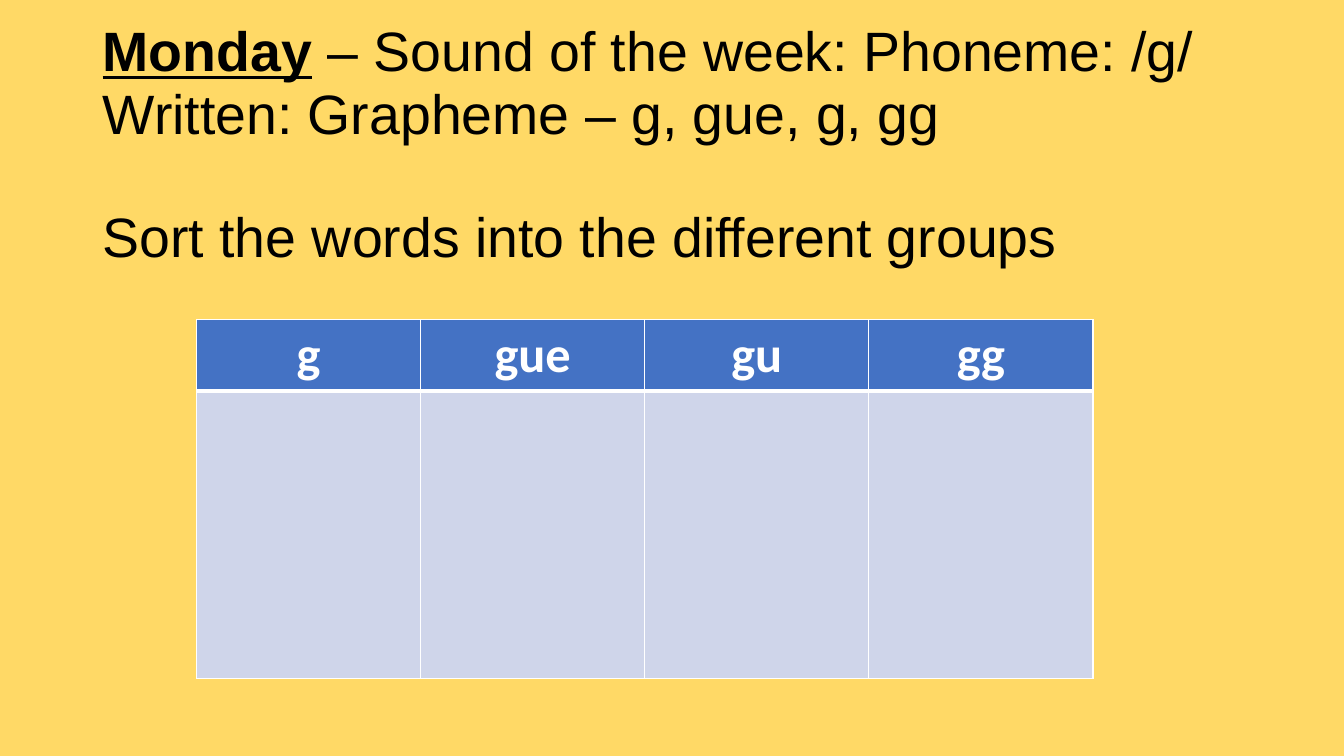
from dataclasses import dataclass

from lxml import etree
from pptx import Presentation, util as u
from pptx.dml.color import RGBColor
from pptx.enum import text
from pptx.oxml.ns import qn


@dataclass(frozen=True)
class Theme:
    background: str = "FFD966"
    ink: str = "000000"
    header: str = "4472C4"
    body: str = "CFD5EA"
    white: str = "FFFFFF"
    title_font: str = "Arial"
    table_font: str = "Calibri"
    title_size: float = 39.6
    table_size: int = 36
    thin: int = 1
    thick: int = 3


THEME = Theme()
WIDTH, HEIGHT = 13.33, 7.5
TITLE_BOX = (0.92, 0.72, 11.5, 1.45)
TABLE_BOX = (1.95, 3.17, 8.89, 3.56)
HEADER_SHARE = 0.2
GRAPHEMES = ["g", "gue", "gu", "gg"]
TITLE = [
    [("Monday", True), (" – Sound of the week: Phoneme: /g/ Written: Grapheme – g, gue, g, gg", False)],
    [("Sort the words into the different groups", False)],
]


def add_span(para, words, color, **formats):
    span = para.add_run()
    span.text = words
    span.font.color.rgb = RGBColor.from_string(color)
    for name, value in formats.items():
        setattr(span.font, name, value)


def add_title(page, box):
    frame = page.shapes.add_textbox(*map(u.Inches, box)).text_frame
    frame.word_wrap = True
    frame.vertical_anchor = text.MSO_ANCHOR.MIDDLE
    for index, spans in enumerate(TITLE):
        para = frame.add_paragraph() if index else frame.paragraphs[0]
        para.line_spacing = 0.94
        para.space_before = u.Pt(43 * index)
        for words, strong in spans:
            add_span(para, words, THEME.ink, name=THEME.title_font,
                     size=u.Pt(THEME.title_size), bold=strong, underline=strong)


def set_borders(cell, **widths):
    """Draw white cell edges; the fill must be set afterwards."""
    properties = cell._tc.get_or_add_tcPr()
    for side in ("L", "R", "T", "B"):
        width = widths.get(side, THEME.thin)
        line = etree.SubElement(properties, qn(f"a:ln{side}"), w=str(u.Pt(width)))
        fill = etree.SubElement(line, qn("a:solidFill"))
        etree.SubElement(fill, qn("a:srgbClr"), val=THEME.white)


def add_sorting_table(page, box):
    table = page.shapes.add_table(2, len(GRAPHEMES), *map(u.Inches, box)).table
    height = box[3]
    table.rows[0].height = u.Inches(height * HEADER_SHARE)
    table.rows[1].height = u.Inches(height * (1 - HEADER_SHARE))
    for column, grapheme in enumerate(GRAPHEMES):
        header, body = table.cell(0, column), table.cell(1, column)
        set_borders(header, B=THEME.thick)
        set_borders(body, T=THEME.thick)
        for cell, color in ((header, THEME.header), (body, THEME.body)):
            cell.fill.solid()
            cell.fill.fore_color.rgb = RGBColor.from_string(color)
        para = header.text_frame.paragraphs[0]
        para.alignment = text.PP_ALIGN.CENTER
        add_span(para, grapheme, THEME.white, name=THEME.table_font,
                 size=u.Pt(THEME.table_size), bold=True)


def main():
    deck = Presentation()
    deck.slide_width, deck.slide_height = u.Inches(WIDTH), u.Inches(HEIGHT)
    page = deck.slides.add_slide(deck.slide_layouts[6])
    page.background.fill.solid()
    page.background.fill.fore_color.rgb = RGBColor.from_string(THEME.background)
    add_title(page, TITLE_BOX)
    add_sorting_table(page, TABLE_BOX)
    deck.save("out.pptx")


if __name__ == "__main__":
    main()
